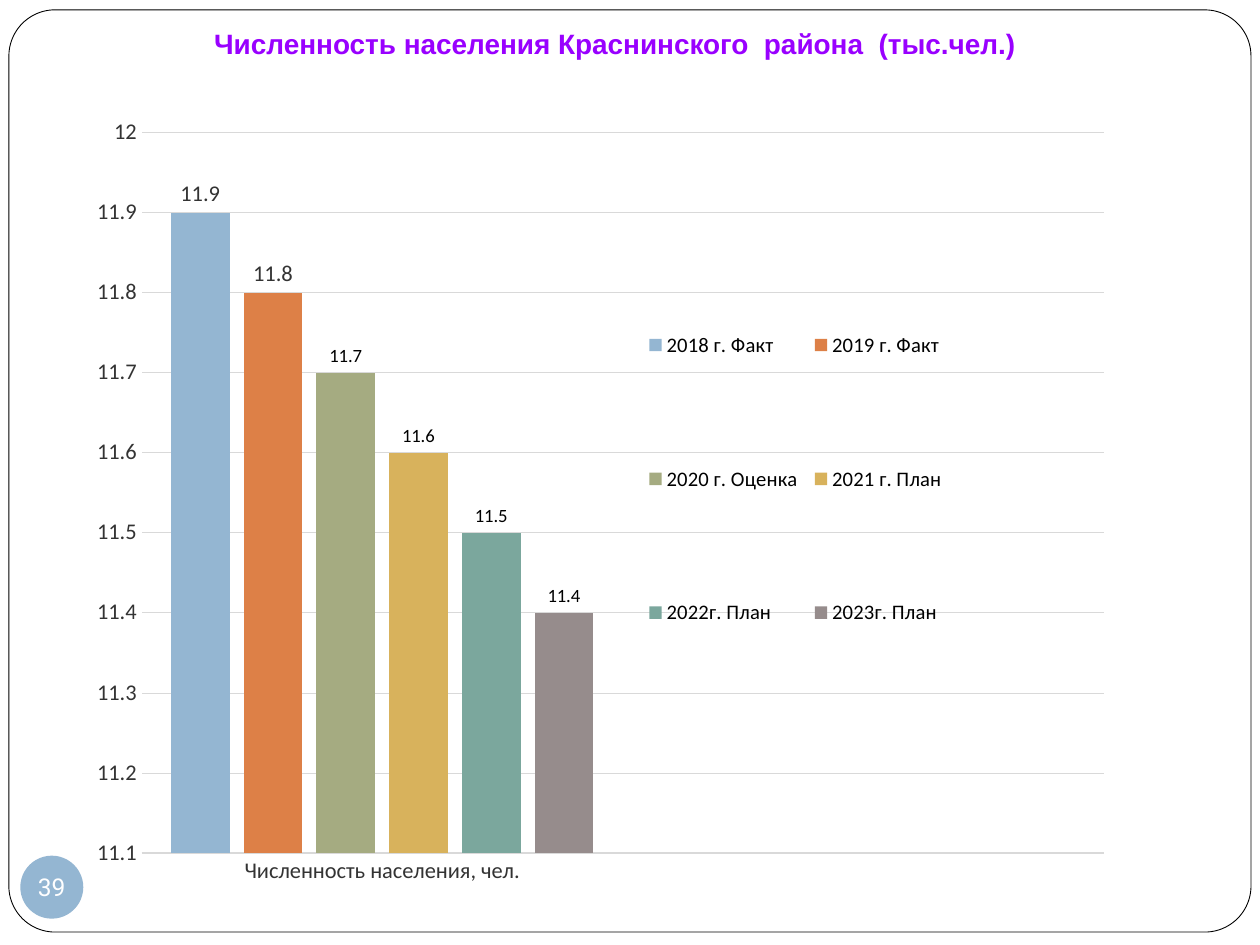
"""Build a slide with a column chart of the district population by year."""
from lxml import etree
from pptx import Presentation
from pptx.chart.data import CategoryChartData
from pptx.dml.color import RGBColor
from pptx.enum.chart import XL_CHART_TYPE as ChartType
from pptx.enum.chart import XL_LABEL_POSITION as LabelPosition
from pptx.enum.chart import XL_LEGEND_POSITION as LegendPosition
from pptx.enum.chart import XL_TICK_MARK as TickMark
from pptx.enum.shapes import MSO_SHAPE as Shape
from pptx.enum.text import MSO_ANCHOR as Anchor
from pptx.enum.text import PP_ALIGN as Align
from pptx.oxml.ns import qn
from pptx.util import Cm, Pt

WHITE = RGBColor(0xFF, 0xFF, 0xFF)
BLACK = RGBColor(0x00, 0x00, 0x00)
VIOLET = RGBColor(0x99, 0x00, 0xFF)
DARK_GRAY = RGBColor(0x33, 0x33, 0x33)
LIGHT_GRAY = RGBColor(0xD9, 0xD9, 0xD9)
BLUE = RGBColor(0x94, 0xB6, 0xD2)
ORANGE = RGBColor(0xDD, 0x80, 0x47)
OLIVE = RGBColor(0xA5, 0xAB, 0x81)
GOLD = RGBColor(0xD8, 0xB2, 0x5C)
TEAL = RGBColor(0x7B, 0xA7, 0x9D)
TAUPE = RGBColor(0x96, 0x8C, 0x8C)

YEARS = [
    ("2018 г. Факт", 11.9, BLUE, 12.8, DARK_GRAY),
    ("2019 г. Факт", 11.8, ORANGE, 12.9, DARK_GRAY),
    ("2020 г. Оценка", 11.7, OLIVE, 10.7, BLACK),
    ("2021 г. План", 11.6, GOLD, 10.7, BLACK),
    ("2022г. План", 11.5, TEAL, 10.7, BLACK),
    ("2023г. План", 11.4, TAUPE, 10.7, BLACK),
]


def write_text(shape, text, *, font, size, color, bold=False, wrap=True):
    shape.text_frame.word_wrap = wrap
    paragraph = shape.text_frame.paragraphs[0]
    paragraph.alignment = Align.CENTER
    run = paragraph.add_run()
    run.text = text
    run.font.name = font
    run.font.size = Pt(size)
    run.font.bold = bold
    run.font.color.rgb = color


def set_layout(parent, index, settings):
    for old_layout in parent.findall(qn("c:layout")):
        parent.remove(old_layout)
    layout = etree.Element(qn("c:layout"))
    manual = etree.SubElement(layout, qn("c:manualLayout"))
    for name, value in settings.items():
        etree.SubElement(manual, qn(f"c:{name}")).set("val", str(value))
    parent.insert(index, layout)


presentation = Presentation()
presentation.slide_width = Cm(25.4)
presentation.slide_height = Cm(19.05)
slide = presentation.slides.add_slide(presentation.slide_layouts[6])

frame = slide.shapes.add_shape(
    Shape.ROUNDED_RECTANGLE, Cm(0.18), Cm(0.2), Cm(25.04), Cm(18.59))
frame.adjustments[0] = 0.05
frame.shadow.inherit = False
frame.fill.solid()
frame.fill.fore_color.rgb = WHITE
frame.line.color.rgb = BLACK
frame.line.width = Pt(0.5)

chart_data = CategoryChartData()
chart_data.categories = ["Численность населения, чел.", ""]
for name, value, *_ in YEARS:
    chart_data.add_series(name, [value, None])
chart = slide.shapes.add_chart(
    ChartType.COLUMN_CLUSTERED, Cm(1.19), Cm(1.98), Cm(22.5), Cm(16.87),
    chart_data).chart
chart.has_title = False
chart.has_legend = True
chart.legend.position = LegendPosition.RIGHT
chart.legend.include_in_layout = False

plot = chart.plots[0]
plot.gap_width = 100
plot.overlap = -24
plot.vary_by_categories = False

value_axis = chart.value_axis
value_axis.minimum_scale = 11.1
value_axis.maximum_scale = 12
value_axis.major_unit = 0.1
value_axis.format.line.fill.background()
value_axis.major_gridlines.format.line.color.rgb = LIGHT_GRAY
value_axis.major_gridlines.format.line.width = Pt(0.27)
category_axis = chart.category_axis
category_axis.format.line.color.rgb = LIGHT_GRAY
category_axis.format.line.width = Pt(1.07)
for axis in (value_axis, category_axis):
    axis.major_tick_mark = TickMark.NONE
    axis.minor_tick_mark = TickMark.NONE

chart_fonts = [
    (chart.font, 10.7, BLACK),
    (chart.legend.font, 11.8, BLACK),
    (value_axis.tick_labels.font, 12.8, DARK_GRAY),
    (category_axis.tick_labels.font, 12.8, DARK_GRAY),
]
for series, (_, _, color, label_size, label_color) in zip(plot.series, YEARS):
    series.format.fill.solid()
    series.format.fill.fore_color.rgb = color
    series.invert_if_negative = False
    labels = series.data_labels
    labels.show_value = True
    labels.position = LabelPosition.OUTSIDE_END
    chart_fonts.append((labels.font, label_size, label_color))
for font, size, color in chart_fonts:
    font.name = "Calibri"
    font.size = Pt(size)
    font.color.rgb = color

plot_area = chart.element.find(".//" + qn("c:plotArea"))
legend = chart.element.find(".//" + qn("c:legend"))
edges = {"xMode": "edge", "yMode": "edge"}
set_layout(plot_area, 0, {"layoutTarget": "inner", **edges,
                          "x": 0.074, "y": 0.041, "w": 0.862, "h": 0.861})
set_layout(legend, 1, {**edges, "x": 0.52, "y": 0.15, "w": 0.28, "h": 0.61})

title = slide.shapes.add_textbox(Cm(1.4), Cm(0.41), Cm(22), Cm(0.94))
write_text(title, "Численность населения Краснинского  района  (тыс.чел.)",
           font="Arial", size=16, color=VIOLET, bold=True)

badge = slide.shapes.add_shape(
    Shape.OVAL, Cm(0.41), Cm(17.25), Cm(1.27), Cm(1.27))
badge.shadow.inherit = False
badge.fill.solid()
badge.fill.fore_color.rgb = BLUE
badge.line.fill.background()
badge_text = badge.text_frame
badge_text.vertical_anchor = Anchor.MIDDLE
badge_text.margin_left = badge_text.margin_right = Cm(0)
badge_text.margin_top = badge_text.margin_bottom = Cm(0)
write_text(badge, "39", font="Roboto", size=14, color=WHITE, wrap=False)

presentation.save("out.pptx")
